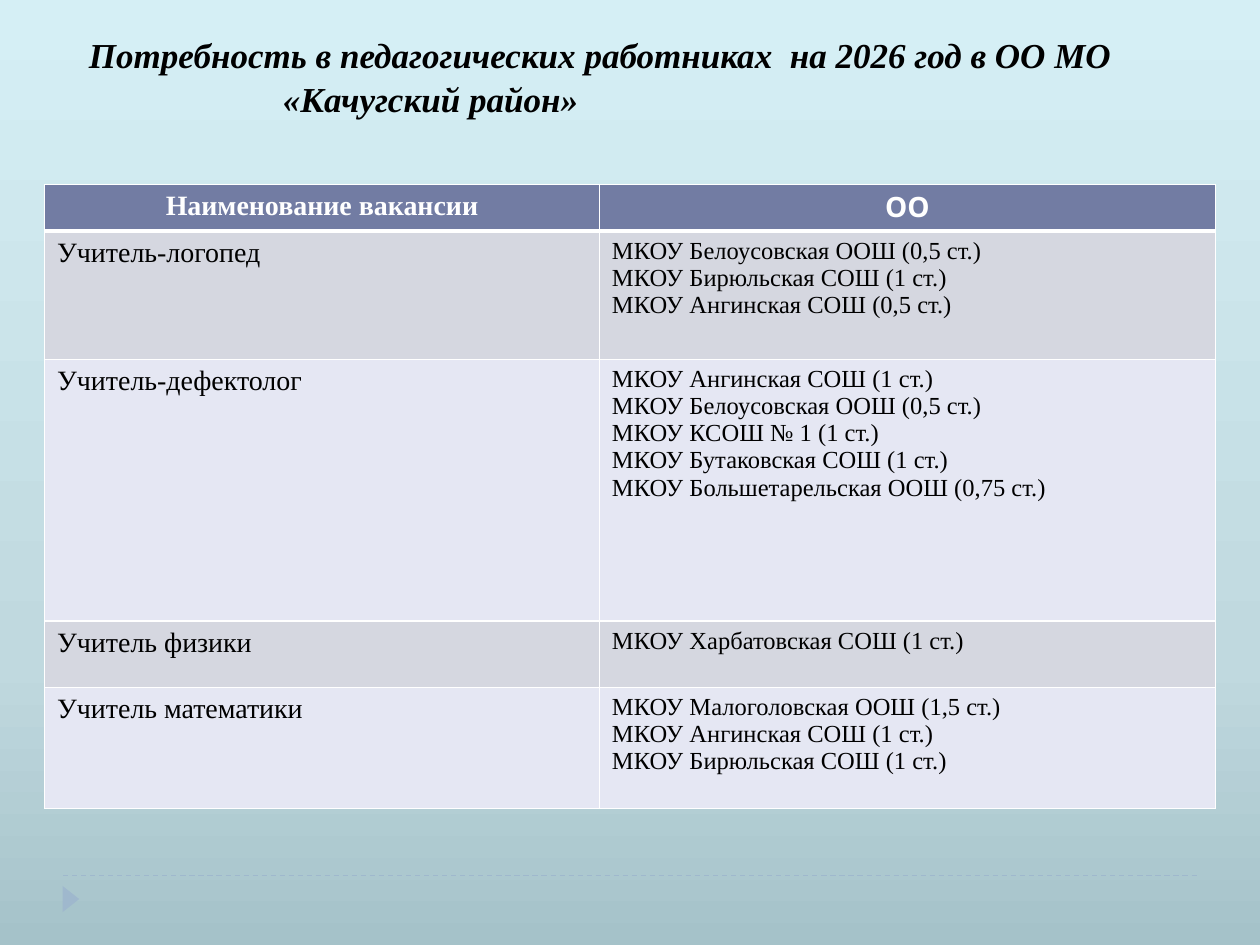
from copy import deepcopy

from pptx import Presentation
from pptx.dml.color import RGBColor
from pptx.enum.dml import MSO_LINE
from pptx.enum.shapes import MSO_CONNECTOR, MSO_SHAPE
from pptx.enum.text import PP_ALIGN
from pptx.oxml.ns import qn
from pptx.util import Pt
from lxml import etree

CENTER, LEFT = PP_ALIGN.CENTER, PP_ALIGN.LEFT
STRAIGHT = MSO_CONNECTOR.STRAIGHT
TRIANGLE = MSO_SHAPE.ISOSCELES_TRIANGLE
DASH = MSO_LINE.DASH

BLACK = RGBColor(0x00, 0x00, 0x00)
WHITE = RGBColor(0xFF, 0xFF, 0xFF)
HEADER_FILL = RGBColor(0x72, 0x7C, 0xA3)
BAND_FILLS = [RGBColor(0xD5, 0xD7, 0xE0), RGBColor(0xE5, 0xE7, 0xF3)]
ACCENT = RGBColor(0x9F, 0xB8, 0xCD)
BACKGROUND = [
    (0, RGBColor(0xA5, 0xC2, 0xC9)),
    (0.3, RGBColor(0xC0, 0xD9, 0xDF)),
    (1, RGBColor(0xD5, 0xEF, 0xF5)),
]
SERIF, SANS = "Times New Roman", "Cabin"

TITLE = [
    ("Потребность в педагогических работниках  на 2026 год в ОО МО", CENTER, 0, 0),
    ("«Качугский район»", LEFT, 154.5, 1),
]
HEADERS = [("Наименование вакансии", SERIF), ("ОО", SANS)]
VACANCIES = [
    ("Учитель-логопед", [
        "МКОУ Белоусовская ООШ (0,5 ст.)",
        "МКОУ Бирюльская СОШ (1 ст.)",
        "МКОУ Ангинская СОШ (0,5 ст.)",
    ]),
    ("Учитель-дефектолог", [
        "МКОУ Ангинская СОШ (1 ст.)",
        "МКОУ Белоусовская ООШ (0,5 ст.)",
        "МКОУ КСОШ № 1 (1 ст.)",
        "МКОУ Бутаковская СОШ (1 ст.)",
        "МКОУ Большетарельская ООШ (0,75 ст.)",
    ]),
    ("Учитель физики", ["МКОУ Харбатовская СОШ (1 ст.)"]),
    ("Учитель математики", [
        "МКОУ Малоголовская ООШ (1,5 ст.)",
        "МКОУ Ангинская СОШ (1 ст.)",
        "МКОУ Бирюльская СОШ (1 ст.)",
    ]),
]
COLUMN_WIDTHS = [317, 352]
ROW_HEIGHTS = [26.5, 73.5, 149.5, 38, 69]


def style_font(font, size, color, name=SERIF, bold=False, italic=False):
    font.size, font.name = Pt(size), name
    font.bold, font.italic = bold, italic
    font.color.rgb = color


def paint_background(page):
    fill = page.background.fill
    fill.gradient()
    fill.gradient_angle = 90
    stop_list = page.element.find(".//" + qn("a:gsLst"))
    stop_list.append(deepcopy(stop_list[-1]))
    for stop, (position, color) in zip(fill.gradient_stops, BACKGROUND):
        stop.position = position
        stop.color.rgb = color


def add_footer_marks(page):
    rule = page.shapes.add_connector(STRAIGHT, Pt(36), Pt(500.4), Pt(684), Pt(500.4))
    rule.line.color.rgb = ACCENT
    rule.line.width = Pt(0.75)
    rule.line.dash_style = DASH
    etree.SubElement(rule.element.spPr, qn("a:effectLst"))
    marker = page.shapes.add_shape(TRIANGLE, Pt(33), Pt(509), Pt(15), Pt(9.5))
    marker.rotation = 90
    marker.shadow.inherit = False
    marker.fill.solid()
    marker.fill.fore_color.rgb = ACCENT
    marker.line.fill.background()


def add_title(page):
    box = page.shapes.add_textbox(Pt(0), Pt(15.5), Pt(686), Pt(60))
    frame = box.text_frame
    frame.word_wrap = True
    frame.text = "\n".join(line[0] for line in TITLE)
    for paragraph, (_, align, indent, gap) in zip(frame.paragraphs, TITLE):
        paragraph.alignment = align
        paragraph.space_before = Pt(gap)
        paragraph._p.get_or_add_pPr().set("marL", str(Pt(indent)))
        style_font(paragraph.runs[0].font, 20, BLACK, bold=True, italic=True)


def style_cell(cell, fill, top=1, bottom=1):
    properties = cell._tc.get_or_add_tcPr()
    for side, width in (("L", 1), ("R", 1), ("T", top), ("B", bottom)):
        border = etree.SubElement(properties, qn("a:ln" + side), w=str(Pt(width)))
        solid = etree.SubElement(border, qn("a:solidFill"))
        etree.SubElement(solid, qn("a:srgbClr"), val=str(WHITE))
    cell.fill.solid()
    cell.fill.fore_color.rgb = fill


def fill_cell(cell, text, size, color, align=LEFT, name=SERIF, bold=False):
    cell.text_frame.text = text
    for paragraph in cell.text_frame.paragraphs:
        paragraph.alignment = align
        style_font(paragraph.runs[0].font, size, color, name, bold)


def add_vacancy_table(page):
    table = page.shapes.add_table(
        len(ROW_HEIGHTS), len(COLUMN_WIDTHS), Pt(25.5), Pt(105.5),
        Pt(sum(COLUMN_WIDTHS)), Pt(sum(ROW_HEIGHTS))).table
    for column, width in zip(table.columns, COLUMN_WIDTHS):
        column.width = Pt(width)
    for row, height in zip(table.rows, ROW_HEIGHTS):
        row.height = Pt(height)
    for column, (text, name) in enumerate(HEADERS):
        cell = table.cell(0, column)
        style_cell(cell, HEADER_FILL, bottom=3)
        fill_cell(cell, text, 16, WHITE, CENTER, name, True)
    for row, (vacancy, schools) in enumerate(VACANCIES, 1):
        for column, (text, size) in enumerate([(vacancy, 16), ("\n".join(schools), 14)]):
            cell = table.cell(row, column)
            style_cell(cell, BAND_FILLS[(row - 1) % 2], top=3 if row == 1 else 1)
            fill_cell(cell, text, size, BLACK)


def main():
    deck = Presentation()
    deck.slide_width, deck.slide_height = Pt(720), Pt(540)
    page = deck.slides.add_slide(deck.slide_layouts[6])
    paint_background(page)
    add_footer_marks(page)
    add_title(page)
    add_vacancy_table(page)
    deck.save("out.pptx")


if __name__ == "__main__":
    main()
